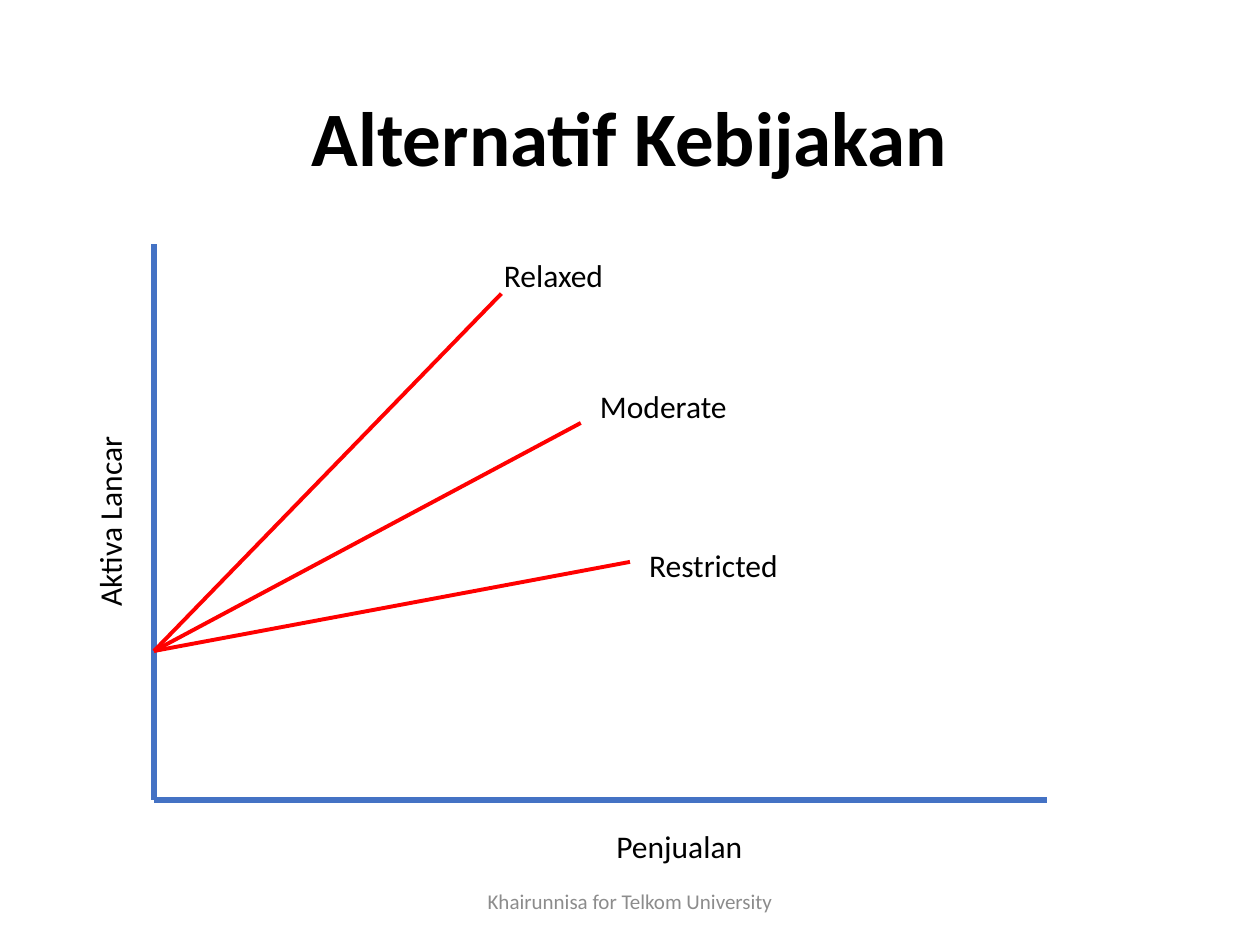
from lxml import etree
from pptx import Presentation
from pptx.dml.color import RGBColor
from pptx.enum.shapes import MSO_CONNECTOR
from pptx.enum.text import MSO_ANCHOR, PP_ALIGN
from pptx.oxml.ns import qn
from pptx.util import Pt

STRAIGHT = MSO_CONNECTOR.STRAIGHT
TOP, MIDDLE = MSO_ANCHOR.TOP, MSO_ANCHOR.MIDDLE
CENTER = PP_ALIGN.CENTER

THEME = {
    "font": "Calibri",
    "text": "000000", "muted": "8C8C8C", "axis": "4472C4", "policy": "FF0000",
    "title_size": 44, "label_size": 18, "footer_size": 12,
    "axis_width": 3, "policy_width": 2.25,
}

TITLE = ("Alternatif Kebijakan", (49.5, 28.75, 621, 104.4))
FOOTER = ("Khairunnisa for Telkom University", (238.5, 500.5, 243, 28.75))
X_TITLE = ("Penjualan", (309, 468.9, 158.4, 29))
Y_TITLE = ("Aktiva Lancar", (48.2, 207.4, 36, 181.4))

ORIGIN = (88, 457.2)
Y_AXIS_END = (88, 139.5)
X_AXIS_END = (598.5, 457.2)
POLICY_START = (88, 372)
LABEL_SIZE = (124.6, 29)
# name, line end, label corner
POLICIES = [
    ("Relaxed", (286.5, 167.8), (254, 142.8)),
    ("Moderate", (331.9, 241.7), (316.8, 217.6)),
    ("Restricted", (360, 321.1), (345.4, 308.4)),
]


def add_text(slide, text, box, size, color="text", bold=False, anchor=TOP):
    s = slide.shapes.add_textbox(*map(Pt, box))
    tf = s.text_frame
    tf.word_wrap = True
    tf.vertical_anchor = anchor
    p = tf.paragraphs[0]
    p.text = text
    p.alignment = CENTER
    p.font.name = THEME["font"]
    p.font.size = Pt(THEME[size])
    p.font.bold = bold
    p.font.color.rgb = RGBColor.from_string(THEME[color])
    return tf


def add_line(slide, start, end, kind):
    """Draw a line whose colour and width belong to kind: axis or policy."""
    s = slide.shapes.add_connector(STRAIGHT, *map(Pt, start + end))
    s.line.color.rgb = RGBColor.from_string(THEME[kind])
    s.line.width = Pt(THEME[f"{kind}_width"])
    etree.SubElement(s._element.spPr, qn("a:effectLst"))


def main():
    prs = Presentation()
    prs.slide_width, prs.slide_height = Pt(720), Pt(540)
    slide = prs.slides.add_slide(prs.slide_layouts[6])

    tf = add_text(slide, *TITLE, "title_size", bold=True, anchor=MIDDLE)
    tf.paragraphs[0].line_spacing = 0.9

    add_line(slide, Y_AXIS_END, ORIGIN, "axis")
    add_line(slide, ORIGIN, X_AXIS_END, "axis")
    for name, end, corner in POLICIES:
        add_line(slide, POLICY_START, end, "policy")
        add_text(slide, name, corner + LABEL_SIZE, "label_size")

    tf = add_text(slide, *Y_TITLE, "label_size")
    tf._txBody.bodyPr.set("vert", "vert270")
    add_text(slide, *X_TITLE, "label_size")
    add_text(slide, *FOOTER, "footer_size", "muted", anchor=MIDDLE)

    prs.save("out.pptx")


if __name__ == "__main__":
    main()
